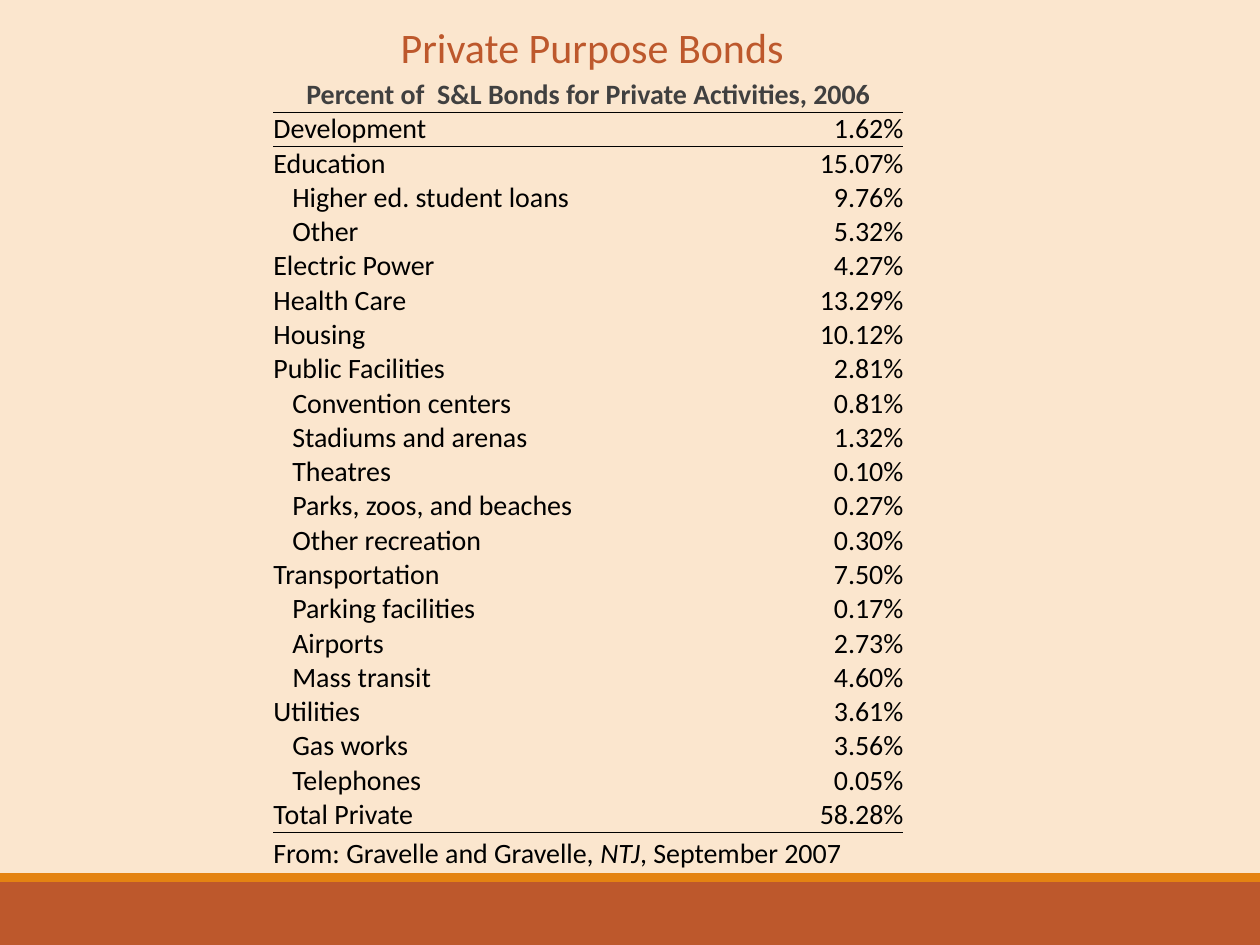
from dataclasses import dataclass

from lxml import etree
from pptx import Presentation
from pptx.dml.color import RGBColor
from pptx.enum import shapes, text
from pptx.oxml import ns
from pptx.util import Inches, Pt


@dataclass(frozen=True)
class Theme:
    font: str = "Calibri"
    background: str = "FBE6CE"
    rust: str = "BD582C"
    orange: str = "E48312"
    heading: str = "404040"
    ink: str = "000000"
    title_size: int = 24
    body_size: int = 16
    rule_width: float = 0.5


THEME = Theme()
PLAIN_TABLE_STYLE = "{2D5ABB26-0587-4C30-8999-92F81FD0307C}"
NESTED_INDENT = 0.15
COLUMN_WIDTHS = (3.11, 1.89)
ROW_HEIGHT = 0.26
EDGE_ROW_HEIGHT = 0.31

TITLE = "Private Purpose Bonds"
HEADING = "Percent of  S&L Bonds for Private Activities, 2006"
SOURCE = (("From: Gravelle and Gravelle, ", False), ("NTJ", True), (", September 2007", False))
ACTIVITIES = (
    ("Development", "1.62%", False),
    ("Education", "15.07%", False),
    ("Higher ed. student loans", "9.76%", True),
    ("Other", "5.32%", True),
    ("Electric Power", "4.27%", False),
    ("Health Care", "13.29%", False),
    ("Housing", "10.12%", False),
    ("Public Facilities", "2.81%", False),
    ("Convention centers", "0.81%", True),
    ("Stadiums and arenas", "1.32%", True),
    ("Theatres", "0.10%", True),
    ("Parks, zoos, and beaches", "0.27%", True),
    ("Other recreation", "0.30%", True),
    ("Transportation", "7.50%", False),
    ("Parking facilities", "0.17%", True),
    ("Airports", "2.73%", True),
    ("Mass transit", "4.60%", True),
    ("Utilities", "3.61%", False),
    ("Gas works", "3.56%", True),
    ("Telephones", "0.05%", True),
    ("Total Private", "58.28%", False),
)


def style_span(span, size, color, bold=False, italic=False):
    span.font.name = THEME.font
    span.font.size = Pt(size)
    span.font.color.rgb = RGBColor.from_string(color)
    span.font.bold = bold
    span.font.italic = italic


def add_bar(page, top, height, color):
    bar = page.shapes.add_shape(
        shapes.MSO_SHAPE.RECTANGLE, 0, Inches(top), Inches(10), Inches(height)
    )
    bar.shadow.inherit = False
    bar.fill.solid()
    bar.fill.fore_color.rgb = RGBColor.from_string(color)
    bar.line.fill.background()


def add_title(page):
    box = page.shapes.add_textbox(Inches(2.17), Inches(0.17), Inches(5.06), Inches(0.5))
    box.text_frame.word_wrap = True
    para = box.text_frame.paragraphs[0]
    para.text = TITLE
    para.alignment = text.PP_ALIGN.CENTER
    para.line_spacing = 0.9
    style_span(para.runs[0], THEME.title_size, THEME.rust)


def write_cell(cell, spans, align, color=THEME.ink, bold=False, indent=0):
    cell.margin_left = Inches(indent)
    cell.margin_right = cell.margin_top = cell.margin_bottom = 0
    cell.vertical_anchor = text.MSO_ANCHOR.BOTTOM
    para = cell.text_frame.paragraphs[0]
    para.alignment = align
    for words, italic in spans:
        span = para.add_run()
        span.text = words
        style_span(span, THEME.body_size, color, bold, italic)


def add_rule(cell, edge):
    line = etree.Element(ns.qn(f"a:{edge}"), w=str(Pt(THEME.rule_width)))
    fill = etree.SubElement(line, ns.qn("a:solidFill"))
    etree.SubElement(fill, ns.qn("a:srgbClr"), val=THEME.ink)
    cell._tc.get_or_add_tcPr().insert(0, line)


def rule_below(table, row):
    for column in range(len(COLUMN_WIDTHS)):
        add_rule(table.cell(row, column), "lnB")
        add_rule(table.cell(row + 1, column), "lnT")


def add_activity_table(page):
    last = len(ACTIVITIES) + 1
    heights = [EDGE_ROW_HEIGHT] + [ROW_HEIGHT] * len(ACTIVITIES) + [EDGE_ROW_HEIGHT]
    table = page.shapes.add_table(
        len(heights), len(COLUMN_WIDTHS), Inches(2.17), Inches(0.58),
        Inches(sum(COLUMN_WIDTHS)), Inches(sum(heights)),
    ).table
    table.first_row = table.horz_banding = False
    table._tbl.tblPr.find(ns.qn("a:tableStyleId")).text = PLAIN_TABLE_STYLE
    for column, width in zip(table.columns, COLUMN_WIDTHS):
        column.width = Inches(width)
    for row, height in zip(table.rows, heights):
        row.height = Inches(height)
    for cell in table.iter_cells():
        cell.fill.background()
    for row in (0, last):
        table.cell(row, 0).merge(table.cell(row, 1))

    left, center, right = text.PP_ALIGN.LEFT, text.PP_ALIGN.CENTER, text.PP_ALIGN.RIGHT
    write_cell(table.cell(0, 0), [(HEADING, False)], center, THEME.heading, bold=True)
    for row, (name, share, nested) in enumerate(ACTIVITIES, start=1):
        indent = NESTED_INDENT if nested else 0
        write_cell(table.cell(row, 0), [(name, False)], left, indent=indent)
        write_cell(table.cell(row, 1), [(share, False)], right)
    write_cell(table.cell(last, 0), SOURCE, left)
    rule_below(table, 0)
    rule_below(table, last - 1)


def main():
    deck = Presentation()
    deck.slide_width, deck.slide_height = Inches(10), Inches(7.5)
    page = deck.slides.add_slide(deck.slide_layouts[6])
    page.background.fill.solid()
    page.background.fill.fore_color.rgb = RGBColor.from_string(THEME.background)
    add_bar(page, 7, 0.5, THEME.rust)
    add_bar(page, 6.93, 0.07, THEME.orange)
    add_activity_table(page)
    add_title(page)
    deck.save("out.pptx")


if __name__ == "__main__":
    main()
